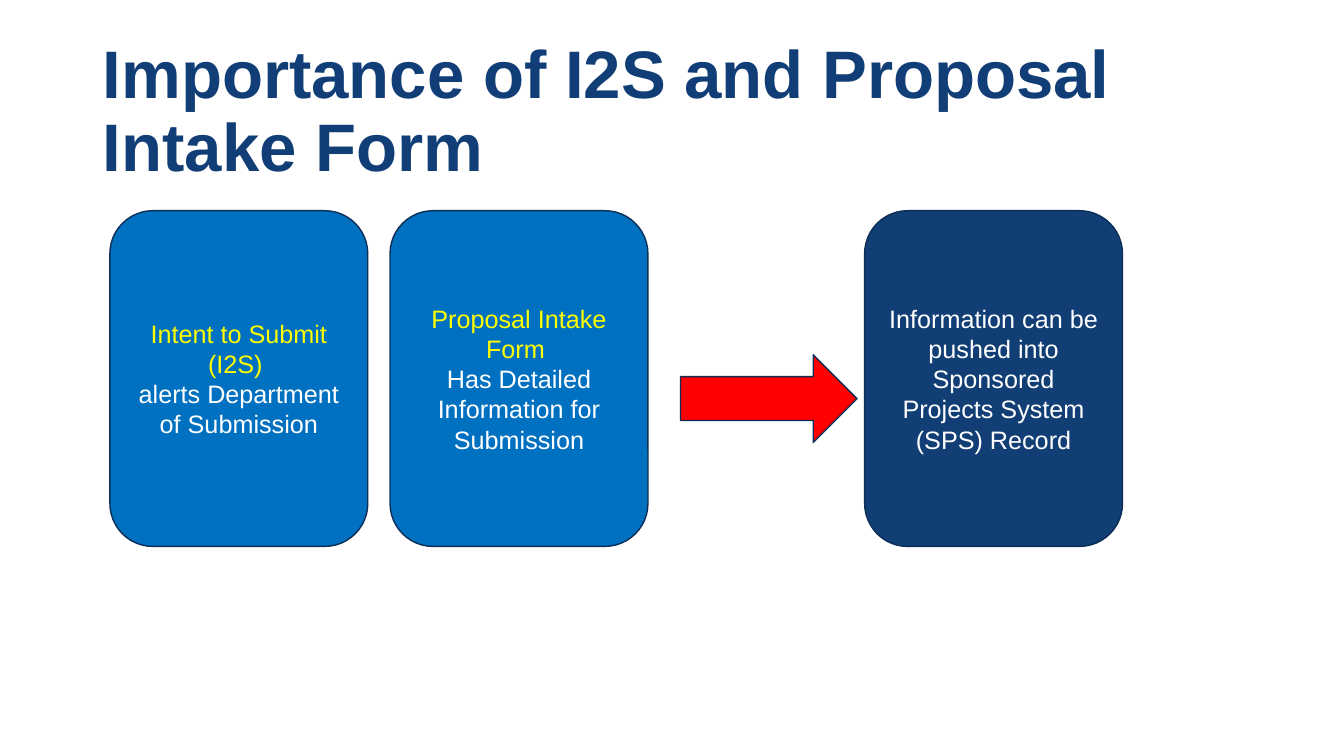
from pptx import Presentation
from pptx.dml.color import RGBColor
from pptx.enum.shapes import MSO_SHAPE
from pptx.enum.text import MSO_ANCHOR, PP_ALIGN
from pptx.util import Cm, Pt

ROUNDED = MSO_SHAPE.ROUNDED_RECTANGLE
RIGHT_ARROW = MSO_SHAPE.RIGHT_ARROW
MIDDLE = MSO_ANCHOR.MIDDLE
CENTER = PP_ALIGN.CENTER

TITLE_NAVY = RGBColor(0x11, 0x3E, 0x76)
BOX_NAVY = RGBColor(0x10, 0x3E, 0x75)
OUTLINE = RGBColor(0x0C, 0x2E, 0x57)
BLUE = RGBColor(0x00, 0x70, 0xC0)
RED = RGBColor(0xFF, 0x00, 0x00)
YELLOW = RGBColor(0xFF, 0xFF, 0x00)
WHITE = RGBColor(0xFF, 0xFF, 0xFF)

BOX_TOP, BOX_WIDTH, BOX_HEIGHT = 5.31, 6.5, 8.46
STEPS = [
    (2.77, BLUE, [("Intent to Submit (I2S) ", YELLOW),
                  ("alerts Department of Submission", WHITE)]),
    (9.83, BLUE, [("Proposal Intake Form ", YELLOW),
                  ("Has Detailed Information for Submission", WHITE)]),
    (21.79, BOX_NAVY, [("Information can be pushed into Sponsored "
                        "Projects System (SPS) Record", WHITE)]),
]


def add_outlined_shape(kind, left, top, width, height, fill):
    shape = slide.shapes.add_shape(kind, Cm(left), Cm(top), Cm(width), Cm(height))
    shape.shadow.inherit = False
    shape.fill.solid()
    shape.fill.fore_color.rgb = fill
    shape.line.color.rgb = OUTLINE
    shape.line.width = Pt(1)
    return shape


def add_span(para, text, size, color, bold=False):
    span = para.add_run()
    span.text = text
    span.font.name = "Arial"
    span.font.size = Pt(size)
    span.font.bold = bold
    span.font.color.rgb = color


deck = Presentation()
deck.slide_width, deck.slide_height = Cm(33.87), Cm(19.05)
slide = deck.slides.add_slide(deck.slide_layouts[6])

title = slide.shapes.add_textbox(Cm(2.34), Cm(1.02), Cm(30.12), Cm(3.68))
title.text_frame.word_wrap = True
title.text_frame.vertical_anchor = MIDDLE
title_para = title.text_frame.paragraphs[0]
title_para.line_spacing = 0.9
add_span(title_para, "Importance of I2S and Proposal Intake Form", 48, TITLE_NAVY, bold=True)

for left, fill, lines in STEPS:
    box = add_outlined_shape(ROUNDED, left, BOX_TOP, BOX_WIDTH, BOX_HEIGHT, fill)
    frame = box.text_frame
    frame.word_wrap = True
    frame.vertical_anchor = MIDDLE
    for index, (text, color) in enumerate(lines):
        para = frame.add_paragraph() if index else frame.paragraphs[0]
        para.alignment = CENTER
        add_span(para, text, 18, color)

add_outlined_shape(RIGHT_ARROW, 17.15, 8.94, 4.45, 2.21, RED)

deck.save("out.pptx")
